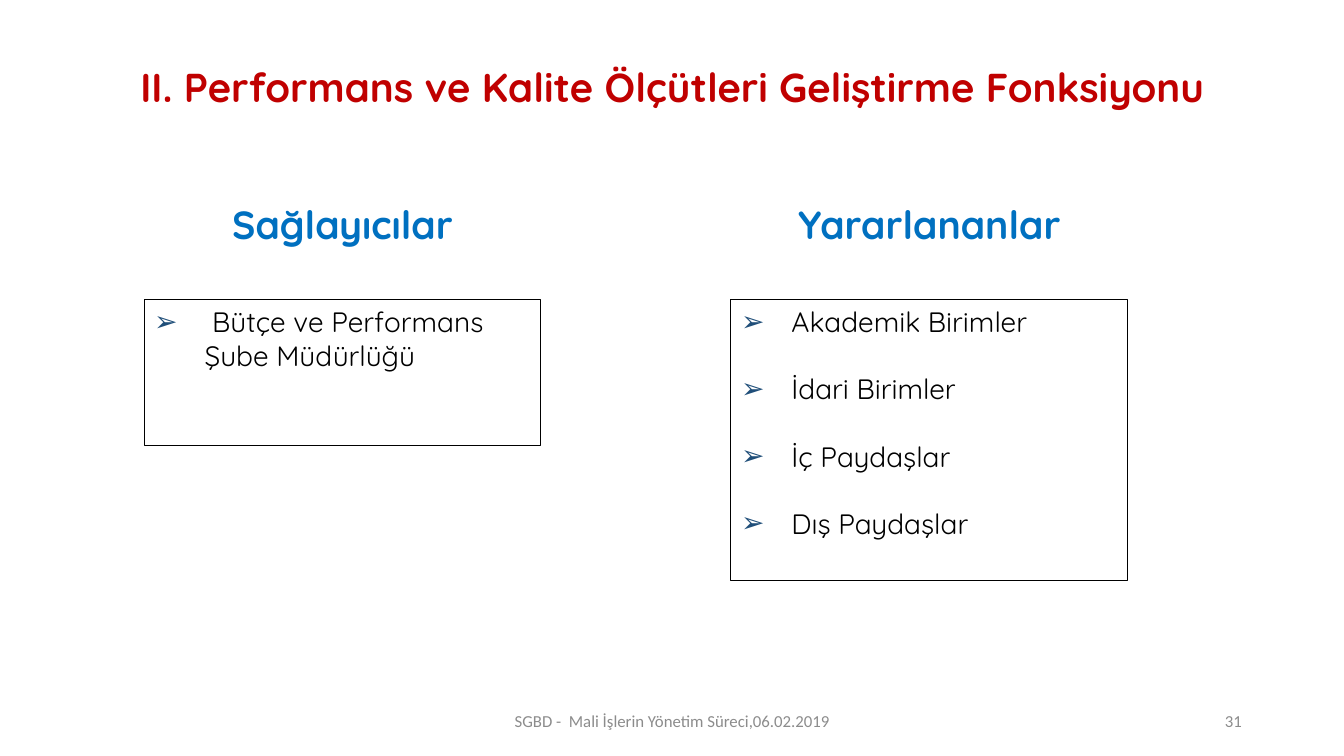
import dataclasses
import lxml.etree
import pptx
import pptx.dml.color
import pptx.enum.text
import pptx.oxml.ns
import pptx.util

Cm = pptx.util.Cm
Pt = pptx.util.Pt
Align = pptx.enum.text.PP_ALIGN
Anchor = pptx.enum.text.MSO_ANCHOR


@dataclasses.dataclass(frozen=True)
class Theme:
    """Colours, fonts and type sizes of the slide."""
    red: str = "C00000"
    blue: str = "0070C0"
    navy: str = "1F4E79"
    black: str = "000000"
    gray: str = "8C8C8C"
    main: str = "Quicksand"
    small: str = "Calibri"
    title: float = 28.8
    head: float = 28
    body: float = 20
    foot: float = 12


THEME = Theme()


def color(code):
    """Turn a hex code into a colour."""
    return pptx.dml.color.RGBColor.from_string(code)


def place(shape, box, anchor):
    """Set a shape into its box and return its text frame."""
    shape.left, shape.top, shape.width, shape.height = map(Cm, box)
    frame = shape.text_frame
    frame.word_wrap = True
    frame.auto_size = pptx.enum.text.MSO_AUTO_SIZE.NONE
    frame.vertical_anchor = anchor
    return frame


def write(para, text, font, size, code, bold=False, align=Align.LEFT):
    """Add one styled run to a paragraph."""
    para.alignment = align
    para.space_before = Pt(0)
    run = para.add_run()
    run.text = text
    run.font.name = font
    run.font.size = Pt(size)
    run.font.bold = bold
    run.font.color.rgb = color(code)


def bullet(para):
    """Give a paragraph an arrow bullet and a hanging indent."""
    props = para._p.get_or_add_pPr()
    props.set("marL", str(Cm(1.27)))
    props.set("indent", str(-Cm(1.27)))
    name = pptx.oxml.ns.qn
    tint = lxml.etree.SubElement(props, name("a:buClr"))
    lxml.etree.SubElement(tint, name("a:srgbClr")).set("val", THEME.navy)
    lxml.etree.SubElement(props, name("a:buChar")).set("char", "➢")


def add_title(shape, box, text):
    """Fill the title, raised above the middle of its box."""
    frame = place(shape, box, Anchor.MIDDLE)
    frame.margin_bottom = Cm(1.32)
    para = frame.paragraphs[0]
    para.line_spacing = 0.9
    write(para, text, THEME.main, THEME.title, THEME.red, True, Align.CENTER)


def add_group(head, body, box, title, items):
    """Place a heading with a framed list below it."""
    left, top, width, height = box
    frame = place(head, (left, top, width, 1.45), Anchor.TOP)
    write(frame.paragraphs[0], title, THEME.main, THEME.head, THEME.blue,
          True, Align.CENTER)
    drop = 2.62
    frame = place(body, (left, top + drop, width, height - drop), Anchor.TOP)
    body.line.color.rgb = color(THEME.black)
    body.line.width = Pt(0.75)
    for index, item in enumerate(items):
        para = frame.paragraphs[0] if index == 0 else frame.add_paragraph()
        write(para, item, THEME.main, THEME.body, THEME.black)
        para.space_after = Pt(24 if index < len(items) - 1 else 0)
        bullet(para)


def add_foot(slide, box, text, align):
    """Add a small gray text at the foot of the slide."""
    frame = place(slide.shapes.add_textbox(0, 0, 0, 0), box, Anchor.MIDDLE)
    write(frame.paragraphs[0], text, THEME.small, THEME.foot, THEME.gray,
          align=align)


def main():
    """Build and save the slide."""
    deck = pptx.Presentation()
    deck.slide_width, deck.slide_height = Cm(33.87), Cm(19.05)
    slide = deck.slides.add_slide(deck.slide_layouts.get_by_name("Comparison"))
    title, head1, body1, head2, body2 = slide.placeholders
    add_title(title, (2.34, 1.02, 29.21, 3.68),
              "II. Performans ve Kalite Ölçütleri Geliştirme Fonksiyonu")
    add_group(head1, body1, (3.63, 4.93, 10, 6.3), "Sağlayıcılar",
              [" Bütçe ve Performans Şube Müdürlüğü"])
    add_group(head2, body2, (18.42, 4.93, 10, 9.71), "Yararlananlar",
              ["Akademik Birimler", "İdari Birimler", "İç Paydaşlar",
               "Dış Paydaşlar"])
    add_foot(slide, (11.23, 17.65, 11.43, 1.02),
             "SGBD -  Mali İşlerin Yönetim Süreci,06.02.2019", Align.CENTER)
    add_foot(slide, (23.93, 17.65, 7.62, 1.02), "31", Align.RIGHT)
    deck.save("out.pptx")


if __name__ == "__main__":
    main()
